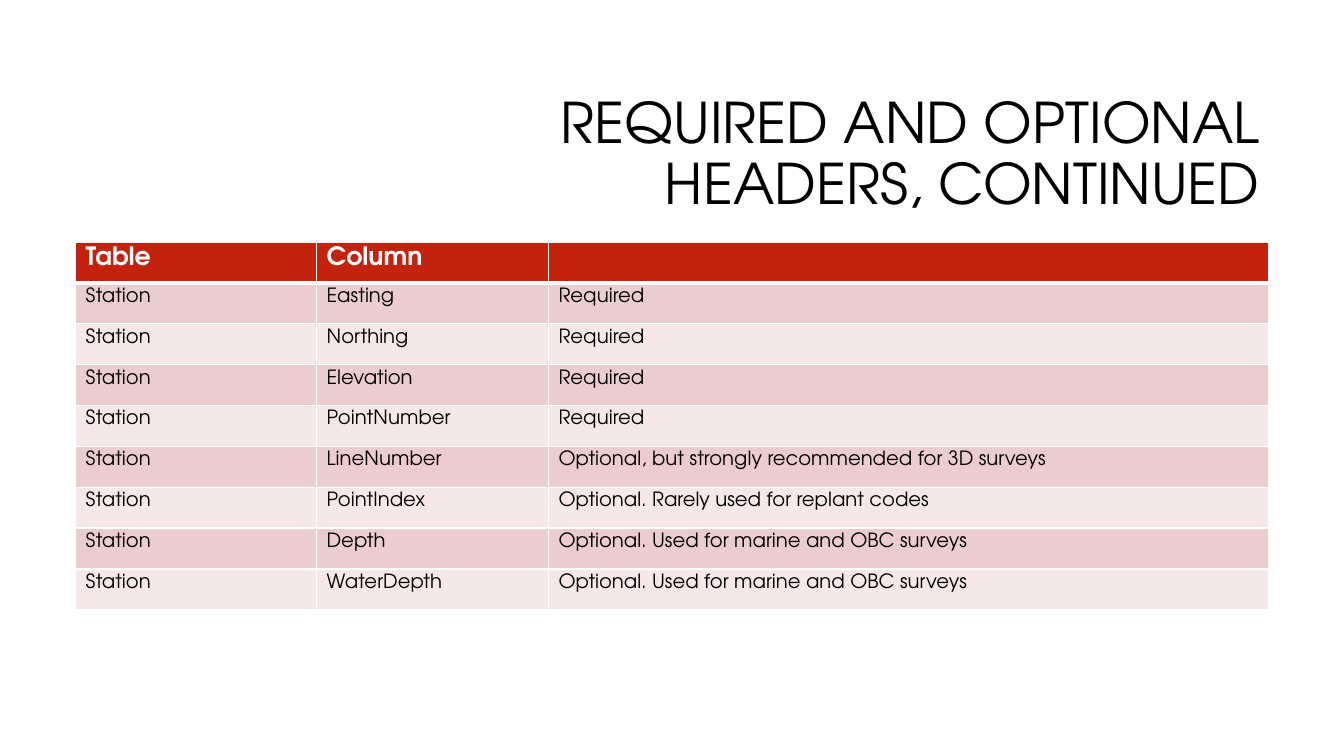
from lxml.etree import SubElement
from pptx import Presentation
from pptx.dml.color import RGBColor
from pptx.enum.text import MSO_ANCHOR as Anchor, PP_ALIGN as Align
from pptx.oxml.ns import qn
from pptx.util import Inches, Pt

COLORS = {
    "text": "000000",
    "white": "FFFFFF",
    "header": "C4220D",
    "odd": "EACDCC",
    "even": "F5E8E7",
}
TITLE = "REQUIRED AND OPTIONAL HEADERS, CONTINUED"
HEADER = ("Table", "Column", "")
STATION_COLUMNS = (
    ("Easting", "Required"),
    ("Northing", "Required"),
    ("Elevation", "Required"),
    ("PointNumber", "Required"),
    ("LineNumber", "Optional, but strongly recommended for 3D surveys"),
    ("PointIndex", "Optional. Rarely used for replant codes"),
    ("Depth", "Optional. Used for marine and OBC surveys"),
    ("WaterDepth", "Optional. Used for marine and OBC surveys"),
)


class SlideBuilder:
    """Holds the style and the current slide."""

    font_name = "TeX Gyre Adventor"

    def __init__(self, slide):
        self.slide = slide

    def add_text(self, paragraph, text, color, **format_values):
        run = paragraph.add_run()
        run.text = text
        run.font.color.rgb = RGBColor.from_string(COLORS[color])
        for name, value in {"name": self.font_name, **format_values}.items():
            setattr(run.font, name, value)

    def add_title(self, text, left, top, width, height):
        box = self.slide.shapes.add_textbox(
            Inches(left), Inches(top), Inches(width), Inches(height))
        frame = box.text_frame
        frame.word_wrap = True
        frame.vertical_anchor = Anchor.MIDDLE
        paragraph = frame.paragraphs[0]
        paragraph.alignment = Align.RIGHT
        paragraph.line_spacing = 0.9
        self.add_text(paragraph, text, "text", size=Pt(40))

    def add_borders(self, cell, **widths):
        """Draw white borders; widths maps the sides L, R, T and B to points."""
        properties = cell._tc.get_or_add_tcPr()
        for side, width in widths.items():
            line = SubElement(properties, qn(f"a:ln{side}"), w=str(Pt(width)))
            fill = SubElement(line, qn("a:solidFill"))
            SubElement(fill, qn("a:srgbClr"), val=COLORS["white"])

    def add_table(self, rows, left, top, column_widths, height):
        table = self.slide.shapes.add_table(
            len(rows), len(column_widths), Inches(left), Inches(top),
            Inches(sum(column_widths)), Inches(height)).table
        for column, width in zip(table.columns, column_widths):
            column.width = Inches(width)
        for row_index, texts in enumerate(rows):
            is_header = row_index == 0
            if is_header:
                fill, color, style = "header", "white", {"size": Pt(18), "bold": True}
            else:
                fill = "odd" if row_index % 2 else "even"
                color, style = "text", {"size": Pt(14), "bold": False}
            for column_index, text in enumerate(texts):
                cell = table.cell(row_index, column_index)
                self.add_borders(cell, L=1, R=1, T=3 if row_index == 1 else 1,
                                 B=3 if is_header else 1)
                cell.fill.solid()
                cell.fill.fore_color.rgb = RGBColor.from_string(COLORS[fill])
                if text:
                    self.add_text(cell.text_frame.paragraphs[0], text, color, **style)


def main():
    presentation = Presentation()
    presentation.slide_width = Inches(13.33)
    presentation.slide_height = Inches(7.5)
    slide = presentation.slides.add_slide(presentation.slide_layouts[6])
    builder = SlideBuilder(slide)
    builder.add_title(TITLE, 3.17, 0.84, 9.42, 1.41)
    rows = [HEADER] + [("Station", *entry) for entry in STATION_COLUMNS]
    builder.add_table(rows, 0.75, 2.4, (2.39, 2.3, 7.14), 3.65)
    presentation.save("out.pptx")


if __name__ == "__main__":
    main()
